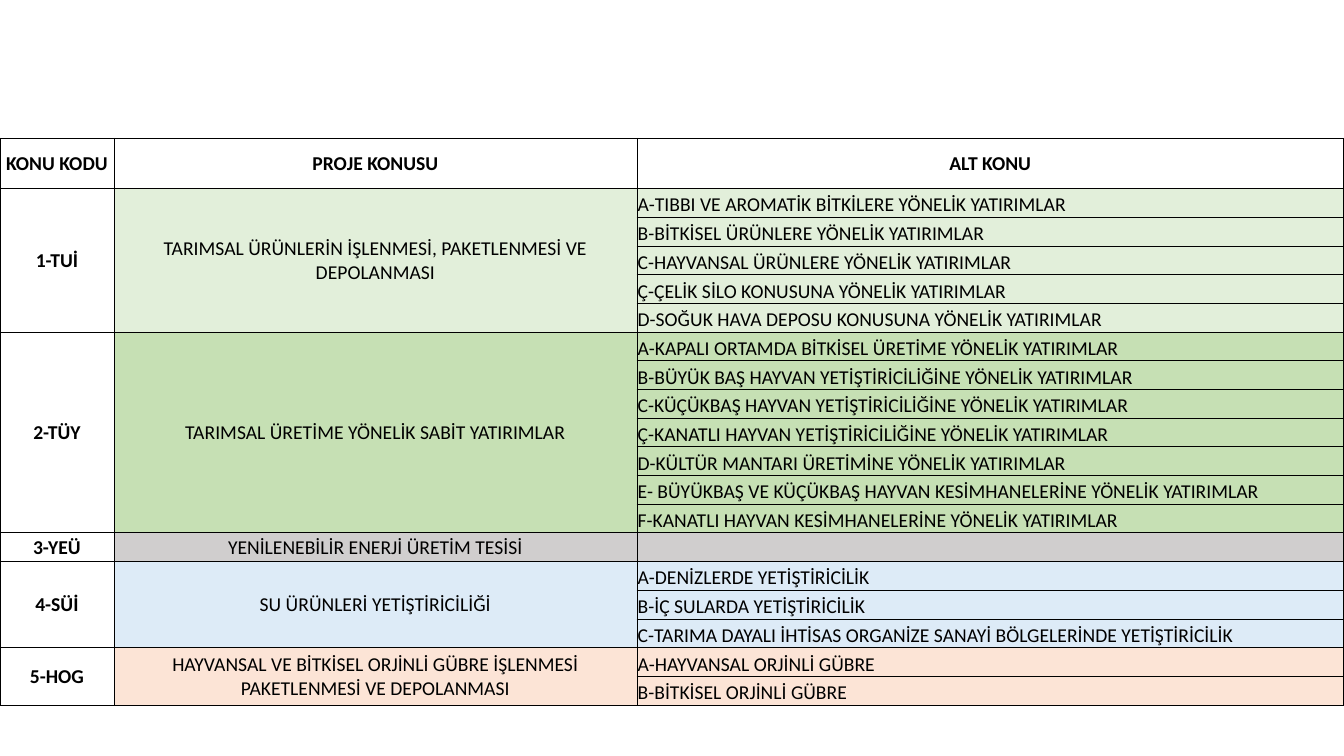
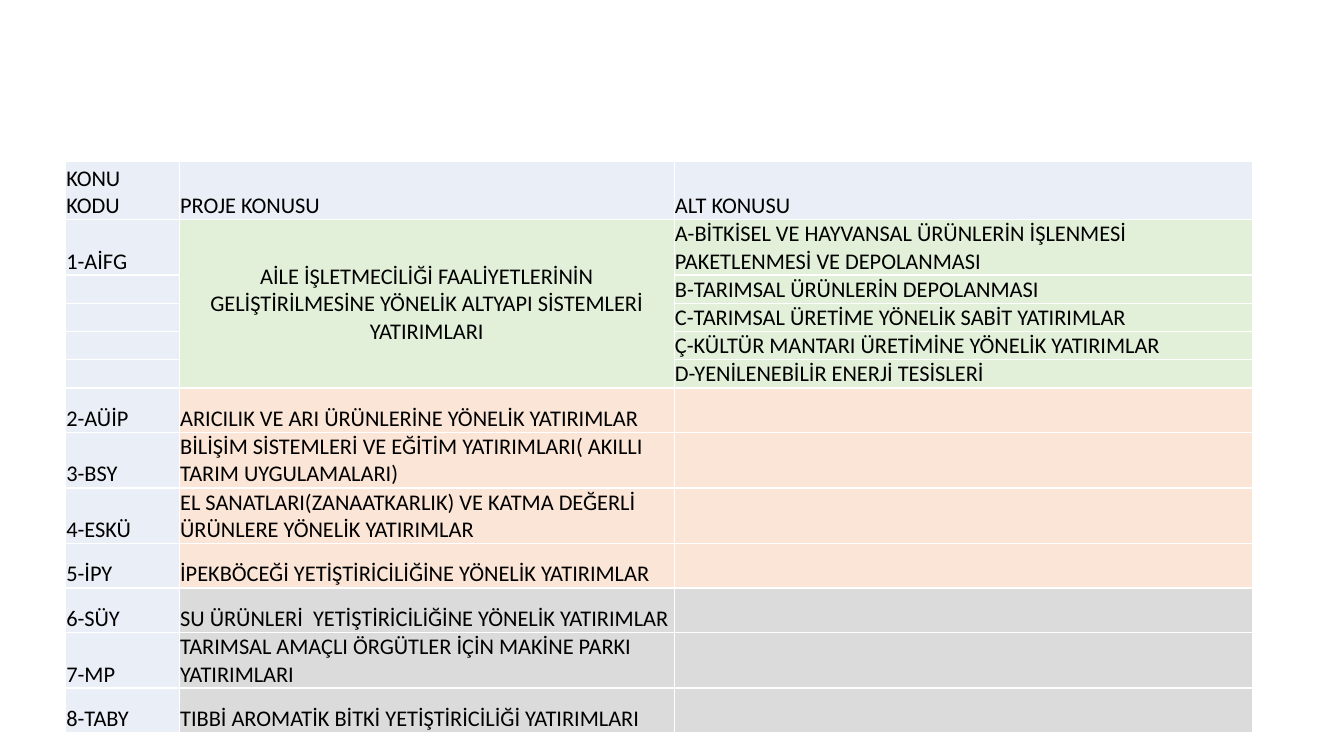
from lxml import etree
from pptx import Presentation
from pptx.dml.color import RGBColor
from pptx.enum.text import MSO_ANCHOR, PP_ALIGN
from pptx.oxml.ns import qn
from pptx.util import Cm, Pt

LEFT, CENTER = PP_ALIGN.LEFT, PP_ALIGN.CENTER
MIDDLE, BOTTOM = MSO_ANCHOR.MIDDLE, MSO_ANCHOR.BOTTOM

# Theme: font, sizes, colours and cell formats
THEME = {
    "font": "Calibri",
    "ink": "000000",
    "small": 14,
    "large": 16,
    "black": "000000",
    "white": "FFFFFF",
    "pale_green": "E2EFDA",
    "green": "C6E0B4",
    "gray": "D0CECE",
    "blue": "DDEBF7",
    "peach": "FCE4D6",
    "ice": "EAEFF7",
    "mint": "E2F0D9",
    "apricot": "FBE5D6",
    "silver": "DBDBDB",
}
INSETS = {
    "margin_left": Cm(0.02),
    "margin_right": Cm(0.02),
    "margin_top": Cm(0.02),
    "margin_bottom": Cm(0),
}
FORMATS = {
    "bold": {"align": CENTER, "anchor": MIDDLE, "bold": True},
    "center": {"align": CENTER, "anchor": MIDDLE, "bold": False},
    "plain": {"align": LEFT, "anchor": BOTTOM, "bold": False},
}

# Tables: each group is code, project topic, fill, subtopics
ROW = 0.56
TALL = 2 * ROW
TABLES = [
    {
        "left": 0, "top": 3.48, "columns": [2.87, 13.18, 17.81],
        "heights": [1.27] + [13.03 / 18] * 18,
        "size": "small", "border": "black", "border_width": 0.5,
        "header": ["KONU KODU", "PROJE KONUSU", "ALT KONU"],
        "header_format": "bold", "code_format": "bold", "single_format": "center",
        "code_fill": None, "merge_codes": True,
        "groups": [
            ("1-TUİ", "TARIMSAL ÜRÜNLERİN İŞLENMESİ, PAKETLENMESİ VE DEPOLANMASI", "pale_green", [
                "A-TIBBI VE AROMATİK BİTKİLERE YÖNELİK YATIRIMLAR",
                "B-BİTKİSEL ÜRÜNLERE YÖNELİK YATIRIMLAR",
                "C-HAYVANSAL ÜRÜNLERE YÖNELİK YATIRIMLAR",
                "Ç-ÇELİK SİLO KONUSUNA YÖNELİK YATIRIMLAR",
                "D-SOĞUK HAVA DEPOSU KONUSUNA YÖNELİK YATIRIMLAR",
            ]),
            ("2-TÜY", "TARIMSAL ÜRETİME YÖNELİK SABİT YATIRIMLAR", "green", [
                "A-KAPALI ORTAMDA BİTKİSEL ÜRETİME YÖNELİK YATIRIMLAR",
                "B-BÜYÜK BAŞ HAYVAN YETİŞTİRİCİLİĞİNE YÖNELİK YATIRIMLAR",
                "C-KÜÇÜKBAŞ HAYVAN YETİŞTİRİCİLİĞİNE YÖNELİK YATIRIMLAR",
                "Ç-KANATLI HAYVAN YETİŞTİRİCİLİĞİNE YÖNELİK YATIRIMLAR",
                "D-KÜLTÜR MANTARI ÜRETİMİNE YÖNELİK YATIRIMLAR",
                "E- BÜYÜKBAŞ VE KÜÇÜKBAŞ HAYVAN KESİMHANELERİNE YÖNELİK YATIRIMLAR",
                "F-KANATLI HAYVAN KESİMHANELERİNE YÖNELİK YATIRIMLAR",
            ]),
            ("3-YEÜ", "YENİLENEBİLİR ENERJİ ÜRETİM TESİSİ", "gray", [""]),
            ("4-SÜİ", "SU ÜRÜNLERİ YETİŞTİRİCİLİĞİ", "blue", [
                "A-DENİZLERDE YETİŞTİRİCİLİK",
                "B-İÇ SULARDA YETİŞTİRİCİLİK",
                "C-TARIMA DAYALI İHTİSAS ORGANİZE SANAYİ BÖLGELERİNDE YETİŞTİRİCİLİK",
            ]),
            ("5-HOG", "HAYVANSAL VE BİTKİSEL ORJİNLİ GÜBRE İŞLENMESİ PAKETLENMESİ VE DEPOLANMASI", "peach", [
                "A-HAYVANSAL ORJİNLİ GÜBRE",
                "B-BİTKİSEL ORJİNLİ GÜBRE",
            ]),
        ],
    },
    {
        "left": 1.65, "top": 4.06, "columns": [2.87, 12.47, 14.58],
        "heights": [1.47, TALL] + [ROW] * 4 + [TALL] * 7,
        "size": "large", "border": "white", "border_width": 1,
        "header": ["KONU KODU", "PROJE KONUSU", "ALT KONUSU"],
        "header_format": "plain", "code_format": "plain", "single_format": "plain",
        "code_fill": "ice", "merge_codes": False,
        "groups": [
            ("1-AİFG", "AİLE İŞLETMECİLİĞİ FAALİYETLERİNİN GELİŞTİRİLMESİNE YÖNELİK ALTYAPI SİSTEMLERİ YATIRIMLARI", "mint", [
                "A-BİTKİSEL VE HAYVANSAL ÜRÜNLERİN İŞLENMESİ PAKETLENMESİ VE DEPOLANMASI",
                "B-TARIMSAL ÜRÜNLERİN DEPOLANMASI",
                "C-TARIMSAL ÜRETİME YÖNELİK SABİT YATIRIMLAR",
                "Ç-KÜLTÜR MANTARI ÜRETİMİNE YÖNELİK YATIRIMLAR",
                "D-YENİLENEBİLİR ENERJİ TESİSLERİ",
            ]),
            ("2-AÜİP", "ARICILIK VE ARI ÜRÜNLERİNE YÖNELİK YATIRIMLAR", "apricot", [""]),
            ("3-BSY", "BİLİŞİM SİSTEMLERİ VE EĞİTİM YATIRIMLARI( AKILLI TARIM UYGULAMALARI)", "apricot", [""]),
            ("4-ESKÜ", "EL SANATLARI(ZANAATKARLIK) VE KATMA DEĞERLİ ÜRÜNLERE YÖNELİK YATIRIMLAR", "apricot", [""]),
            ("5-İPY", "İPEKBÖCEĞİ YETİŞTİRİCİLİĞİNE YÖNELİK YATIRIMLAR", "apricot", [""]),
            ("6-SÜY", "SU ÜRÜNLERİ  YETİŞTİRİCİLİĞİNE YÖNELİK YATIRIMLAR", "silver", [""]),
            ("7-MP", "TARIMSAL AMAÇLI ÖRGÜTLER İÇİN MAKİNE PARKI YATIRIMLARI", "silver", [""]),
            ("8-TABY", "TIBBİ AROMATİK BİTKİ YETİŞTİRİCİLİĞİ YATIRIMLARI", "silver", [""]),
        ],
    },
]


def add_borders(cell, color, width):
    properties = cell._tc.get_or_add_tcPr()
    for side in ("a:lnL", "a:lnR", "a:lnT", "a:lnB"):
        line = etree.SubElement(properties, qn(side), w=str(Pt(width)))
        solid = etree.SubElement(line, qn("a:solidFill"))
        etree.SubElement(solid, qn("a:srgbClr"), val=color)


def fill_cell(cell, text, format_name, fill, layout):
    style = FORMATS[format_name]
    size = THEME[layout["size"]]
    for name, value in INSETS.items():
        setattr(cell, name, value)
    cell.vertical_anchor = style["anchor"]
    add_borders(cell, THEME[layout["border"]], layout["border_width"])
    if fill:
        cell.fill.solid()
        cell.fill.fore_color.rgb = RGBColor.from_string(THEME[fill])
    else:
        cell.fill.background()
    para = cell.text_frame.paragraphs[0]
    para.alignment = style["align"]
    if text:
        span = para.add_run()
        span.text = text
        font_values = {"name": THEME["font"], "size": Pt(size), "bold": style["bold"]}
        for name, value in font_values.items():
            setattr(span.font, name, value)
        span.font.color.rgb = RGBColor.from_string(THEME["ink"])
    else:
        # An empty cell needs its own type size to keep the row low
        etree.SubElement(para._p, qn("a:endParaRPr"), sz=str(size * 100))


deck = Presentation()
deck.slide_width, deck.slide_height = Cm(33.87), Cm(19.05)

for layout in TABLES:
    page = deck.slides.add_slide(deck.slide_layouts[6])
    widths, heights = layout["columns"], layout["heights"]
    frame = page.shapes.add_table(
        len(heights), len(widths), Cm(layout["left"]), Cm(layout["top"]),
        Cm(sum(widths)), Cm(sum(heights)))
    table = frame.table
    table.first_row = table.horz_banding = False
    for column, width in zip(table.columns, widths):
        column.width = Cm(width)
    for row, height in zip(table.rows, heights):
        row.height = Cm(height)

    # Header row
    for index, heading in enumerate(layout["header"]):
        fill_cell(table.cell(0, index), heading, layout["header_format"],
                  layout["code_fill"], layout)

    # Groups: code and topic stand beside their subtopics
    start = 1
    for code, topic, fill, subtopics in layout["groups"]:
        last = start + len(subtopics) - 1
        topic_format = "center" if last > start else layout["single_format"]
        for offset, subtopic in enumerate(subtopics):
            first = offset == 0
            cells = [
                (code if first else "", layout["code_format"], layout["code_fill"]),
                (topic if first else "", topic_format, fill),
                (subtopic, "plain", fill),
            ]
            for index, (text, format_name, cell_fill) in enumerate(cells):
                fill_cell(table.cell(start + offset, index), text, format_name,
                          cell_fill, layout)
        if last > start:
            for index in (0, 1) if layout["merge_codes"] else (1,):
                table.cell(start, index).merge(table.cell(last, index))
        start = last + 1

deck.save("out.pptx")
